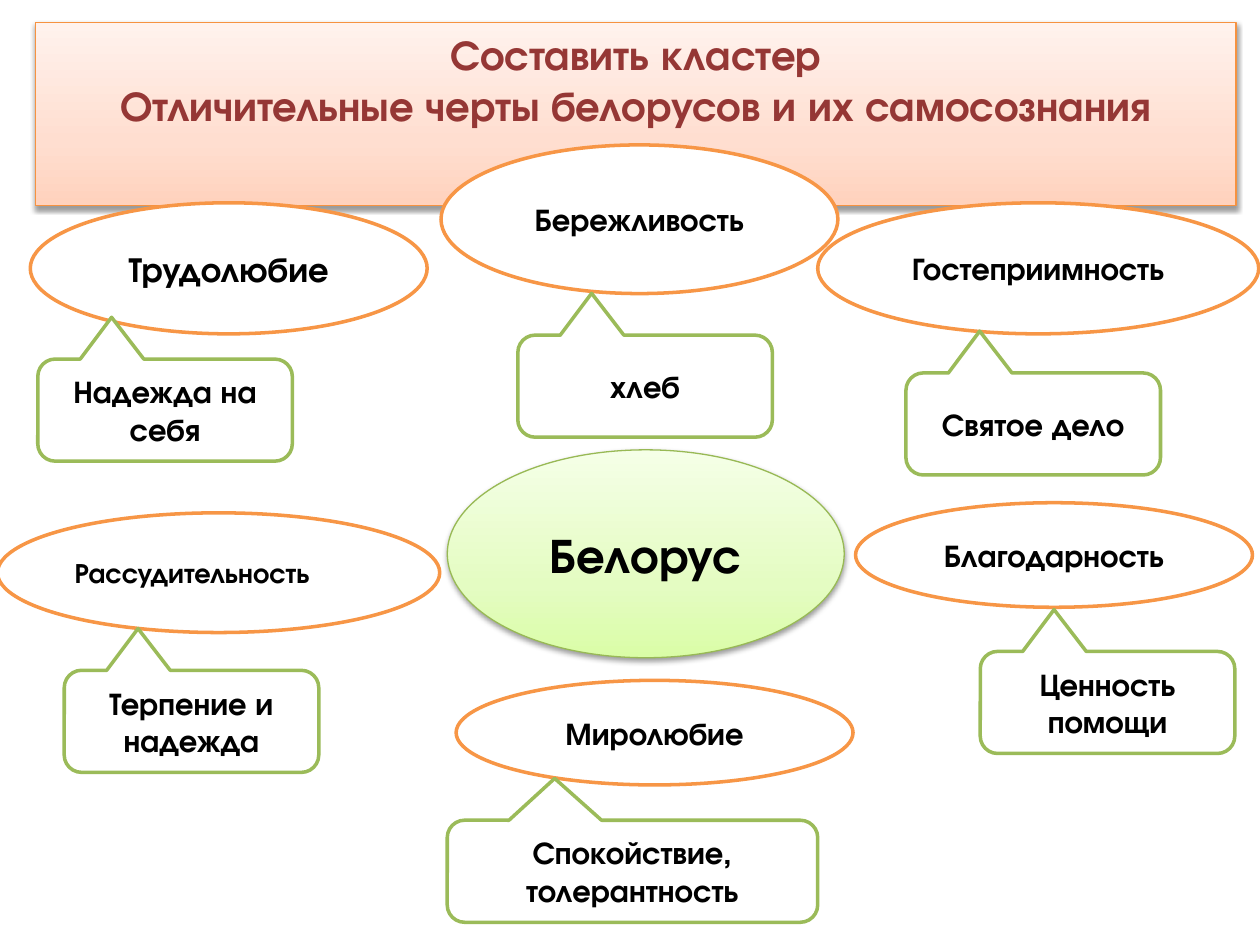
import copy

import lxml.etree
import pptx
import pptx.dml.color
import pptx.enum.shapes
import pptx.enum.text
import pptx.oxml.ns
import pptx.util

Inches = pptx.util.Inches
Pt = pptx.util.Pt
qn = pptx.oxml.ns.qn
SHAPES = pptx.enum.shapes.MSO_SHAPE
ALIGN = pptx.enum.text.PP_ALIGN
ANCHOR = pptx.enum.text.MSO_ANCHOR


def color(hex_string):
    return pptx.dml.color.RGBColor.from_string(hex_string)


class ClusterSlide:
    FONT = "TeX Gyre Adventor"
    TEXT = "000000"
    TITLE_TEXT = "953735"
    PAPER = "FFFFFF"
    TRAIT_LINE = "F79646"
    CALLOUT_LINE = "9BBB59"
    PEACH = ("FFD2BD", "FFDED0", "FFF2ED")
    LIME = ("DAFDA7", "E4FCC2", "F5FFE7")

    def __init__(self, presentation):
        self.slide = presentation.slides.add_slide(presentation.slide_layouts[5])

    def place(self, shape, left, top, width, height):
        shape.left, shape.top = Inches(left), Inches(top)
        shape.width, shape.height = Inches(width), Inches(height)

    def set_text(self, shape, text, size, align=ALIGN.CENTER, anchor=ANCHOR.MIDDLE,
                 text_color=TEXT):
        frame = shape.text_frame
        frame.text = text
        frame.word_wrap = True
        frame.auto_size = pptx.enum.text.MSO_AUTO_SIZE.NONE
        frame.vertical_anchor = anchor
        for paragraph in frame.paragraphs:
            paragraph.alignment = align
            for run in paragraph.runs:
                run.font.name = self.FONT
                run.font.size = Pt(size)
                run.font.bold = True
                run.font.color.rgb = color(text_color)

    def outline(self, shape, line_color, width):
        shape.line.color.rgb = color(line_color)
        shape.line.width = Pt(width)
        shape.shadow.inherit = False

    def raise_with_gradient(self, shape, colors, line_color):
        """Give a shape a three-stop upward gradient, a thin line and a soft shadow."""
        shape.fill.gradient()
        shape.fill.gradient_angle = 90
        properties = shape._element.spPr
        stop_list = properties.find(".//" + qn("a:gsLst"))
        stop_list.insert(1, copy.deepcopy(stop_list[0]))
        for stop, position, stop_color in zip(shape.fill.gradient_stops,
                                              (0, 0.35, 1), colors):
            stop.position = position
            stop.color.rgb = color(stop_color)
        self.outline(shape, line_color, 0.75)
        shadow = lxml.etree.SubElement(
            properties.find(qn("a:effectLst")), qn("a:outerShdw"),
            blurRad=str(Pt(3.1)), dist=str(Pt(1.6)), dir="5400000", rotWithShape="0")
        shade = lxml.etree.SubElement(shadow, qn("a:srgbClr"), val="000000")
        lxml.etree.SubElement(shade, qn("a:alpha"), val="38000")

    def title(self, text, box):
        shape = self.slide.shapes.title
        self.place(shape, *box)
        self.raise_with_gradient(shape, self.PEACH, "F69240")
        self.set_text(shape, text, 24, anchor=ANCHOR.TOP, text_color=self.TITLE_TEXT)

    def add(self, kind, box):
        return self.slide.shapes.add_shape(kind, *map(Inches, box))

    def center(self, text, box):
        shape = self.add(SHAPES.OVAL, box)
        self.raise_with_gradient(shape, self.LIME, "98B955")
        self.set_text(shape, text, 28)

    def plain(self, kind, box, line_color):
        shape = self.add(kind, box)
        shape.fill.solid()
        shape.fill.fore_color.rgb = color(self.PAPER)
        self.outline(shape, line_color, 2)
        return shape

    def trait(self, text, box, size=18, align=ALIGN.CENTER):
        shape = self.plain(SHAPES.OVAL, box, self.TRAIT_LINE)
        self.set_text(shape, text, size, align)

    def callout(self, text, left, top, width=2.02):
        shape = self.plain(SHAPES.ROUNDED_RECTANGULAR_CALLOUT,
                           (left, top, width, 0.81), self.CALLOUT_LINE)
        for index, value in enumerate((-0.21, -0.91, 0.17)):
            shape.adjustments[index] = value
        self.set_text(shape, text, 18)


def main():
    presentation = pptx.Presentation()
    presentation.slide_width = Inches(10)
    presentation.slide_height = Inches(7.5)

    cluster = ClusterSlide(presentation)
    cluster.title("Составить кластер\nОтличительные черты белорусов и их самосознания",
                  (0.28, 0.18, 9.53, 1.45))
    cluster.center("Белорус", (3.55, 3.57, 3.15, 1.65))

    cluster.trait("Трудолюбие", (0.24, 1.61, 3.15, 1.04), size=20)
    cluster.trait("Бережливость", (3.5, 1.15, 3.15, 1.18))
    cluster.trait("Гостеприимность", (6.49, 1.61, 3.5, 1.04))
    cluster.trait("Рассудительность", (-0.02, 4.07, 3.51, 0.95),
                  size=16, align=ALIGN.LEFT)
    cluster.trait("Благодарность", (6.79, 3.99, 3.15, 0.83))
    cluster.trait("Миролюбие", (3.62, 5.4, 3.15, 0.83))

    cluster.callout("Надежда на себя", 0.3, 2.85)
    cluster.callout("хлеб", 4.11, 2.66)
    cluster.callout("Святое дело", 7.19, 2.96)
    cluster.callout("Терпение и надежда", 0.51, 5.32)
    cluster.callout("Ценность помощи", 7.78, 5.17)
    cluster.callout("Спокойствие,\nтолерантность", 3.55, 6.51, width=2.94)

    presentation.save("out.pptx")


if __name__ == "__main__":
    main()
